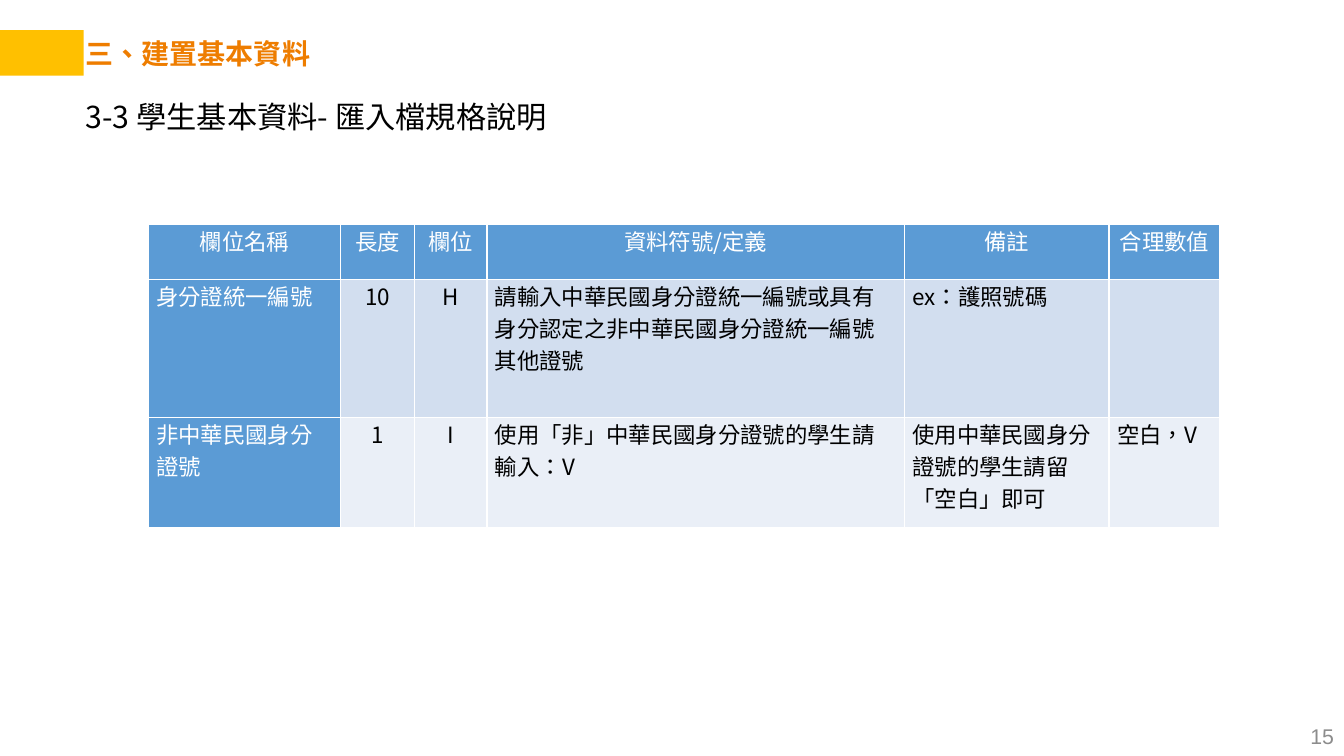
import pptx
import pptx.util
import pptx.dml.color
import pptx.enum.shapes
import pptx.enum.text
import pptx.oxml.ns
import lxml.etree

Inches = pptx.util.Inches
ALIGN = pptx.enum.text.PP_ALIGN
ANCHOR = pptx.enum.text.MSO_ANCHOR
FONT = "Noto Sans CJK SC"
WHITE, BLACK, BLUE = "FFFFFF", "000000", "5B9BD5"
BANDS = ["D2DEEF", "EAEFF7"]
WIDTHS = [1.91, 0.73, 0.72, 4.14, 2.03, 1.1]
HEIGHTS = [0.54, 1.37, 1.09]
ROWS = [
    ["欄位名稱", "長度", "欄位", "資料符號/定義", "備註", "合理數值"],
    ["身分證統一編號", "10", "H",
     "請輸入中華民國身分證統一編號或具有身分認定之非中華民國身分證統一編號其他證號",
     "ex：護照號碼", ""],
    ["非中華民國身分證號", "1", "I",
     "使用「非」中華民國身分證號的學生請輸入：V",
     "使用中華民國身分證號的學生請留「空白」即可", "空白，V"],
]


def color(code):
    return pptx.dml.color.RGBColor.from_string(code)


def paint(item, code):
    item.fill.solid()
    item.fill.fore_color.rgb = color(code)


def write(frame, text, size, code, align=ALIGN.LEFT, face=FONT, bold=False):
    frame.word_wrap = True
    para = frame.paragraphs[0]
    para.alignment = align
    run = para.add_run()
    run.text = text
    font = run.font
    font.size = pptx.util.Pt(size)
    font.bold = bold
    font.name = face
    font.color.rgb = color(code)
    # Traditional Chinese centres its punctuation marks
    font._element.set("lang", "zh-TW")
    # East Asian glyphs take their face from a:ea
    east = lxml.etree.SubElement(font._element, pptx.oxml.ns.qn("a:ea"))
    east.set("typeface", face)


def add_text(slide, box, text, size, code, anchor=ANCHOR.TOP, **style):
    frame = slide.shapes.add_textbox(*map(Inches, box)).text_frame
    frame.vertical_anchor = anchor
    write(frame, text, size, code, **style)


def add_head(slide, left, top, width, height):
    """Place the yellow tab and the section title beside it."""
    tab = slide.shapes.add_shape(
        pptx.enum.shapes.MSO_SHAPE.RECTANGLE,
        Inches(left), Inches(top), Inches(0.83), Inches(height))
    tab.shadow.inherit = False
    paint(tab, "FFC000")
    tab.line.fill.background()
    title = slide.shapes.title
    title.left, title.top = Inches(left + 0.75), Inches(top)
    title.width, title.height = Inches(width - 0.75), Inches(height)
    frame = title.text_frame
    frame.auto_size = pptx.enum.text.MSO_AUTO_SIZE.NONE
    frame.vertical_anchor = ANCHOR.MIDDLE
    write(frame, "三、建置基本資料", 20, "EE7D00", bold=True)


def add_edges(cell):
    """Draw thin white borders on all four sides."""
    props = cell._tc.get_or_add_tcPr()
    for side in "LRTB":
        line = lxml.etree.SubElement(props, pptx.oxml.ns.qn("a:ln" + side))
        line.set("w", str(pptx.util.Pt(1)))
        fill = lxml.etree.SubElement(line, pptx.oxml.ns.qn("a:solidFill"))
        tint = lxml.etree.SubElement(fill, pptx.oxml.ns.qn("a:srgbClr"))
        tint.set("val", WHITE)


def fill_cell(cell, row, col, text):
    head = row == 0
    dark = head or col == 0
    add_edges(cell)
    paint(cell, BLUE if dark else BANDS[row - 1])
    cell.margin_left = cell.margin_right = Inches(0.04 if head else 0.08)
    cell.margin_top = cell.margin_bottom = 0
    if text:
        align = ALIGN.CENTER if head or col in (1, 2) else ALIGN.LEFT
        write(cell.text_frame, text, 16, WHITE if dark else BLACK, align)


def add_grid(slide, left, top):
    table = slide.shapes.add_table(
        len(HEIGHTS), len(WIDTHS), Inches(left), Inches(top),
        Inches(sum(WIDTHS)), Inches(sum(HEIGHTS))).table
    for part, width in zip(table.columns, WIDTHS):
        part.width = Inches(width)
    for part, height in zip(table.rows, HEIGHTS):
        part.height = Inches(height)
    for row, texts in enumerate(ROWS):
        for col, text in enumerate(texts):
            fill_cell(table.cell(row, col), row, col, text)


def main():
    deck = pptx.Presentation()
    deck.slide_width, deck.slide_height = Inches(13.33), Inches(7.5)
    slide = deck.slides.add_slide(deck.slide_layouts[5])
    add_head(slide, 0, 0.3, 3.58, 0.45)
    add_text(slide, (0.75, 0.93, 5.3, 0.52),
             "3-3 學生基本資料- 匯入檔規格說明", 21.6, BLACK)
    add_grid(slide, 1.47, 2.23)
    add_text(slide, (12.71, 7.1, 0.62, 0.4), "15", 15.2, "8C8C8C",
             anchor=ANCHOR.MIDDLE, align=ALIGN.RIGHT, face="Arial")
    deck.save("out.pptx")


if __name__ == "__main__":
    main()
